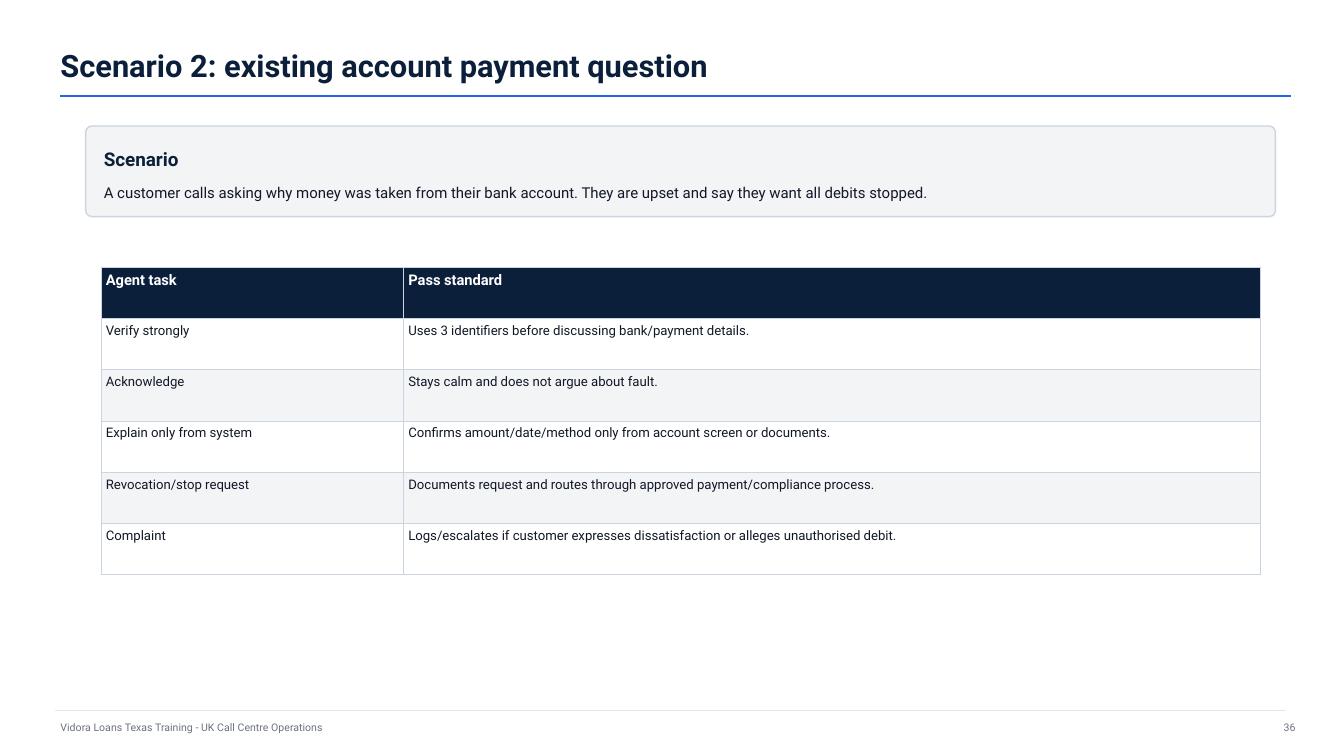
import pptx
import pptx.util
import pptx.dml.color
import pptx.enum.shapes
import pptx.enum.text
import pptx.oxml.ns
import lxml.etree

RGBColor = pptx.dml.color.RGBColor
ALIGN = pptx.enum.text.PP_ALIGN
ANCHOR = pptx.enum.text.MSO_ANCHOR
Pt = pptx.util.Pt
qn = pptx.oxml.ns.qn

NAVY = RGBColor(0x0B, 0x1F, 0x3A)
BLUE = RGBColor(0x25, 0x63, 0xEB)
INK = RGBColor(0x11, 0x18, 0x27)
GREY = RGBColor(0x6B, 0x72, 0x80)
RULE_GREY = RGBColor(0xE5, 0xE7, 0xEB)
BORDER = RGBColor(0xCB, 0xD5, 0xE1)
PALE = RGBColor(0xF3, 0xF4, 0xF6)
WHITE = RGBColor(0xFF, 0xFF, 0xFF)

FONT = "Roboto"
PX = 9144  # EMU per px, 100 px to the inch

deck = pptx.Presentation()
deck.slide_width = 1333 * PX
deck.slide_height = 750 * PX
page = deck.slides.add_slide(deck.slide_layouts[6])


def style_text(frame, text, size, color, bold, margin):
    frame.text = text
    frame.word_wrap = True
    frame.margin_left = frame.margin_right = margin * PX
    frame.margin_top = frame.margin_bottom = margin * PX
    font = frame.paragraphs[0].runs[0].font
    font.name = FONT
    font.size = Pt(size)
    font.bold = bold
    font.color.rgb = color


# Scenario card
card = page.shapes.add_shape(
    pptx.enum.shapes.MSO_SHAPE.ROUNDED_RECTANGLE,
    85 * PX, 125 * PX, 1180 * PX, 90 * PX)
card.adjustments[0] = 0.07
card.shadow.inherit = False
card.fill.solid()
card.fill.fore_color.rgb = PALE
card.line.color.rgb = BORDER
card.line.width = Pt(1)

# Title, card text and footer
texts = [
    ("Scenario 2: existing account payment question",
     60, 42, 1200, 45, 22, NAVY, True, ANCHOR.MIDDLE, ALIGN.LEFT),
    ("Scenario",
     103, 140, 1144, 35, 13.5, NAVY, True, ANCHOR.MIDDLE, ALIGN.LEFT),
    ("A customer calls asking why money was taken from their bank account. "
     "They are upset and say they want all debits stopped.",
     103, 182, 1144, 18, 10.7, INK, False, ANCHOR.TOP, ALIGN.LEFT),
    ("Vidora Loans Texas Training - UK Call Centre Operations",
     60, 712, 750, 20, 7.5, GREY, False, ANCHOR.MIDDLE, ALIGN.LEFT),
    ("36", 1225, 712, 60, 20, 7.5, GREY, False, ANCHOR.MIDDLE, ALIGN.RIGHT),
]
for text, left, top, width, height, size, color, bold, anchor, align in texts:
    box = page.shapes.add_textbox(left * PX, top * PX, width * PX, height * PX)
    style_text(box.text_frame, text, size, color, bold, 0)
    box.text_frame.vertical_anchor = anchor
    box.text_frame.paragraphs[0].alignment = align

# Rules under the title and above the footer
for left, top, color, weight in [(60, 95, BLUE, 1.2), (55, 705, RULE_GREY, 0.75)]:
    rule = page.shapes.add_connector(
        pptx.enum.shapes.MSO_CONNECTOR.STRAIGHT,
        left * PX, top * PX, (left + 1220) * PX, top * PX)
    rule.line.color.rgb = color
    rule.line.width = Pt(weight)
    lxml.etree.SubElement(rule.element.spPr, qn("a:effectLst"))

# Task table
tasks = [
    ("Agent task", "Pass standard"),
    ("Verify strongly",
     "Uses 3 identifiers before discussing bank/payment details."),
    ("Acknowledge", "Stays calm and does not argue about fault."),
    ("Explain only from system",
     "Confirms amount/date/method only from account screen or documents."),
    ("Revocation/stop request",
     "Documents request and routes through approved payment/compliance process."),
    ("Complaint",
     "Logs/escalates if customer expresses dissatisfaction or alleges "
     "unauthorised debit."),
]
table = page.shapes.add_table(
    len(tasks), 2, 100 * PX, 265 * PX, 1150 * PX, 305 * PX).table
table.columns[0].width = 300 * PX
table.columns[1].width = 850 * PX

for row, labels in enumerate(tasks):
    header = row == 0
    for column, label in enumerate(labels):
        cell = table.cell(row, column)
        style_text(cell.text_frame, label, 10.5 if header else 9.4,
                   WHITE if header else INK, header, 5)
        cell.margin_left = cell.margin_right = 5 * PX
        cell.margin_top = cell.margin_bottom = 5 * PX

        # Borders come before the fill in the cell properties
        properties = cell._tc.get_or_add_tcPr()
        for side in ("a:lnL", "a:lnR", "a:lnT", "a:lnB"):
            edge = lxml.etree.SubElement(properties, qn(side), w=str(Pt(0.5)))
            paint = lxml.etree.SubElement(edge, qn("a:solidFill"))
            lxml.etree.SubElement(paint, qn("a:srgbClr"), val=str(BORDER))
        cell.fill.solid()
        cell.fill.fore_color.rgb = NAVY if header else (WHITE if row % 2 else PALE)

deck.save("out.pptx")
